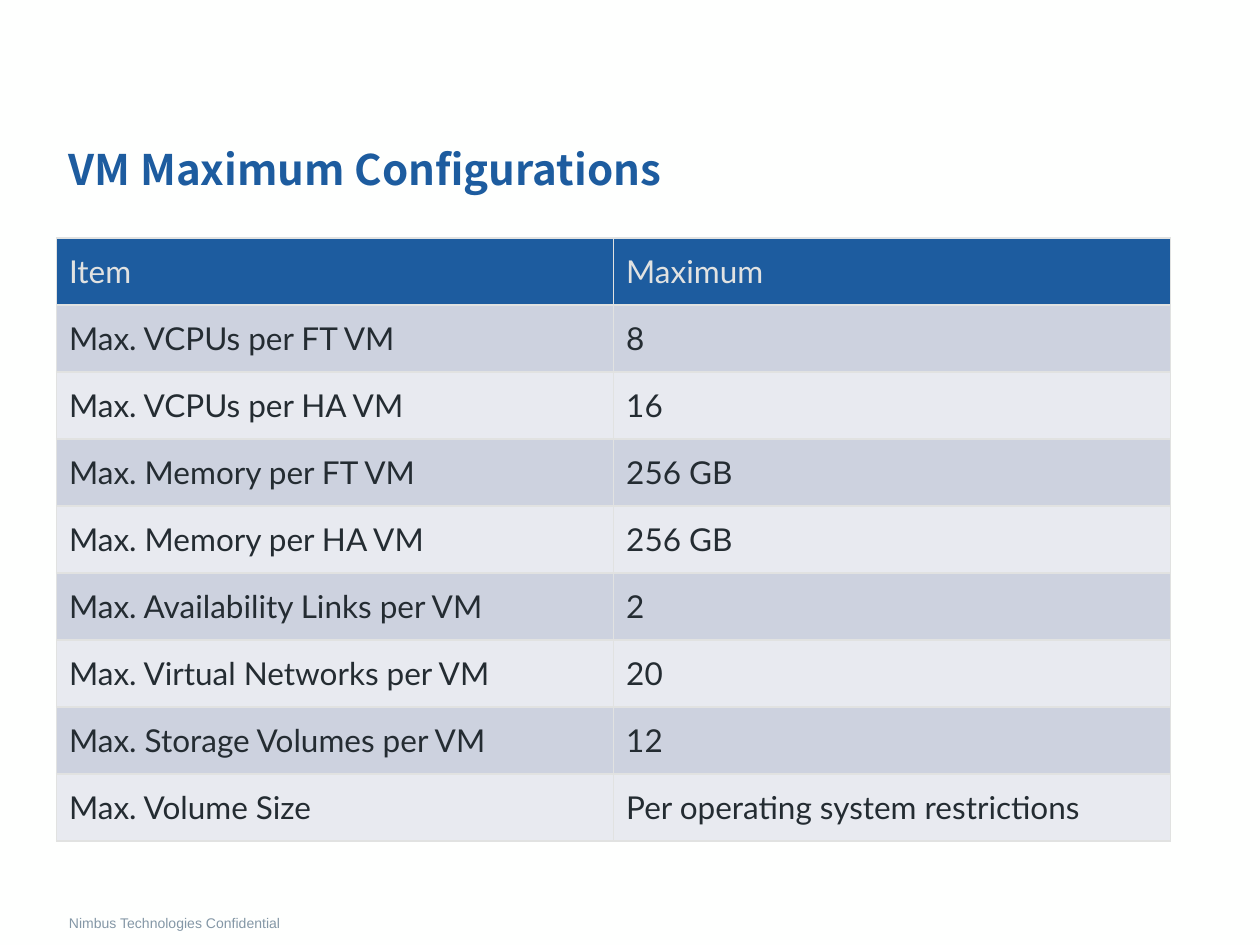
from lxml.etree import SubElement
from pptx import Presentation
from pptx.dml.color import RGBColor
from pptx.enum.text import MSO_ANCHOR
from pptx.oxml.ns import qn
from pptx.util import Cm, Pt

TITLE = "VM Maximum Configurations"
FOOTER = "Nimbus Technologies Confidential"
LIMITS = [
    ("Item", "Maximum"),
    ("Max. VCPUs per FT VM", "8"),
    ("Max. VCPUs per HA VM", "16"),
    ("Max. Memory per FT VM", "256 GB"),
    ("Max. Memory per HA VM", "256 GB"),
    ("Max. Availability Links per VM", "2"),
    ("Max. Virtual Networks per VM", "20"),
    ("Max. Storage Volumes per VM", "12"),
    ("Max. Volume Size", "Per operating system restrictions"),
]

PAPER = RGBColor(0xFE, 0xFF, 0xFE)
BLUE = RGBColor(0x1D, 0x5C, 0x9F)
SLATE = RGBColor(0x84, 0x97, 0xA6)
INK = RGBColor(0x24, 0x2C, 0x32)
PALE = RGBColor(0xE1, 0xE2, 0xE1)
BANDS = [RGBColor(0xE8, 0xEA, 0xF0), RGBColor(0xCD, 0xD2, 0xDF)]

LEFT = Cm(1.14)
COLUMN_WIDTH = Cm(11.23)
ROW_HEIGHT = Cm(1.35)


def write(frame, words, font_name, size, color, bold=False):
    paragraph = frame.paragraphs[0]
    run = paragraph.add_run()
    run.text = words
    run.font.name = font_name
    run.font.size = Pt(size)
    run.font.bold = bold
    run.font.color.rgb = color
    for script in ("a:ea", "a:cs"):
        SubElement(run.font._element, qn(script), typeface=font_name)
    return paragraph


def add_label(slide, top, width, height, *style):
    frame = slide.shapes.add_textbox(LEFT, top, width, height).text_frame
    frame.word_wrap = True
    frame.vertical_anchor = MSO_ANCHOR.MIDDLE
    return write(frame, *style)


def draw_borders(cell):
    properties = cell._tc.get_or_add_tcPr()
    for side in ("a:lnL", "a:lnR", "a:lnT", "a:lnB"):
        line = SubElement(properties, qn(side), w=str(Pt(1)))
        fill = SubElement(line, qn("a:solidFill"))
        SubElement(fill, qn("a:srgbClr"), val=str(PALE))


def add_limits(slide):
    columns = len(LIMITS[0])
    table = slide.shapes.add_table(
        len(LIMITS), columns, LEFT, Cm(4.8),
        COLUMN_WIDTH * columns, ROW_HEIGHT * len(LIMITS),
    ).table
    for column in table.columns:
        column.width = COLUMN_WIDTH
    for r, limit in enumerate(LIMITS):
        table.rows[r].height = ROW_HEIGHT
        for c, words in enumerate(limit):
            cell = table.cell(r, c)
            cell.vertical_anchor = MSO_ANCHOR.MIDDLE
            draw_borders(cell)
            cell.fill.solid()
            cell.fill.fore_color.rgb = BANDS[r % 2] if r else BLUE
            write(cell.text_frame, words, "Lato", 18, INK if r else PALE)


def main():
    deck = Presentation()
    deck.slide_width, deck.slide_height = Cm(25.4), Cm(19.05)
    slide = deck.slides.add_slide(deck.slide_layouts[6])
    slide.background.fill.solid()
    slide.background.fill.fore_color.rgb = PAPER

    title = add_label(slide, Cm(2.59), Cm(19.08), Cm(1.75),
                      TITLE, "Noto Sans CJK KR", 24, BLUE, True)
    title.line_spacing = 0.9
    add_label(slide, Cm(18.19), Cm(22.35), Cm(0.84),
              FOOTER, "Arial", 8, SLATE)
    add_limits(slide)
    deck.save("out.pptx")


if __name__ == "__main__":
    main()
